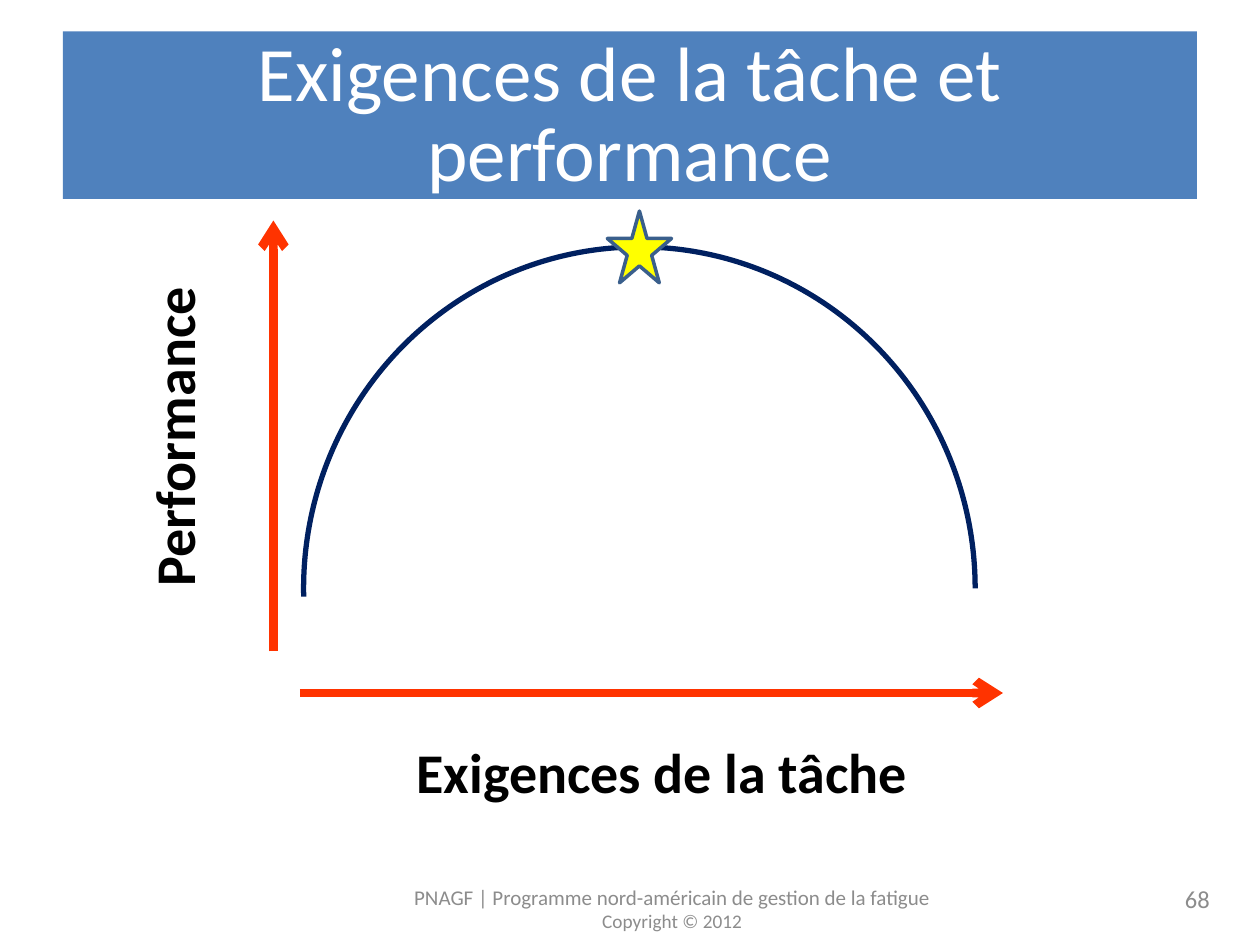
from dataclasses import dataclass

from lxml import etree
from pptx import Presentation
from pptx.dml.color import RGBColor
from pptx.enum.shapes import MSO_CONNECTOR, MSO_SHAPE
from pptx.enum.text import MSO_ANCHOR, PP_ALIGN
from pptx.oxml.ns import qn
from pptx.util import Inches, Pt

CENTER, RIGHT = PP_ALIGN.CENTER, PP_ALIGN.RIGHT
MIDDLE = MSO_ANCHOR.MIDDLE
TITLE_ONLY = 5


@dataclass(frozen=True)
class Theme:
    font: str = "Calibri"
    background: RGBColor = RGBColor(0xFF, 0xFF, 0xFF)
    band: RGBColor = RGBColor(0x4F, 0x81, 0xBD)
    title: RGBColor = RGBColor(0xFF, 0xFF, 0xFF)
    label: RGBColor = RGBColor(0, 0, 0)
    footer: RGBColor = RGBColor(0x8C, 0x8C, 0x8C)
    curve: RGBColor = RGBColor(0x00, 0x20, 0x60)
    axis: RGBColor = RGBColor(0xFF, 0x33, 0x00)
    star: RGBColor = RGBColor(0xFF, 0xFF, 0x00)
    star_edge: RGBColor = RGBColor(0x3A, 0x5F, 0x8C)
    title_size: Pt = Pt(44)
    title_spacing: Pt = Pt(45.8)
    label_size: Pt = Pt(32)
    footer_size: Pt = Pt(12)
    copyright_size: Pt = Pt(11)
    number_size: Pt = Pt(14)


THEME = Theme()


def inches(*lengths):
    return [Inches(length) for length in lengths]


def style(para, size, color, align=CENTER, bold=False):
    para.alignment = align
    para.font.name = THEME.font
    para.font.size = size
    para.font.bold = bold
    para.font.color.rgb = color


def add_text(page, box, lines, color, align=CENTER, bold=False):
    """Add a text box; lines holds a (text, size) pair for each paragraph."""
    frame = page.shapes.add_textbox(*inches(*box)).text_frame
    frame.word_wrap = True
    frame.vertical_anchor = MIDDLE
    for index, (text, size) in enumerate(lines):
        para = frame.add_paragraph() if index else frame.paragraphs[0]
        para.text = text
        style(para, size, color, align, bold)
    return frame


def add_plain_shape(page, kind, box):
    shape = page.shapes.add_shape(kind, *inches(*box))
    shape.shadow.inherit = False
    return shape


def add_title(page, box, text):
    left, top, width, height = box
    band = add_plain_shape(page, MSO_SHAPE.RECTANGLE, box)
    band.fill.solid()
    band.fill.fore_color.rgb = THEME.band
    band.line.fill.background()

    title = page.shapes.title
    band._element.addnext(title._element)
    title.left, title.top, title.width, title.height = inches(
        left, top + 0.05, width, height - 0.08)
    title.text_frame.text = text
    title.text_frame.word_wrap = True
    title.text_frame.vertical_anchor = MIDDLE
    para = title.text_frame.paragraphs[0]
    para.line_spacing = THEME.title_spacing
    style(para, THEME.title_size, THEME.title)


def add_axis(page, start, end):
    axis = page.shapes.add_connector(
        MSO_CONNECTOR.STRAIGHT, *inches(*start, *end))
    axis.line.color.rgb = THEME.axis
    axis.line.width = Pt(5)
    etree.SubElement(axis.line._get_or_add_ln(), qn("a:tailEnd"), type="arrow")
    etree.SubElement(axis._element.spPr, qn("a:effectLst"))


def add_curve(page, box):
    """Draw the upper half of an ellipse with a star at its peak."""
    left, top, width, _ = box
    curve = add_plain_shape(page, MSO_SHAPE.ARC, box)
    curve.adjustments[0] = 107.15
    curve.adjustments[1] = 0
    curve.fill.background()
    curve.line.color.rgb = THEME.curve
    curve.line.width = Pt(3)

    star_width, star_height = 0.51, 0.57
    star = add_plain_shape(page, MSO_SHAPE.STAR_5_POINT, (
        left + (width - star_width) / 2, top - star_height / 2,
        star_width, star_height))
    star.fill.solid()
    star.fill.fore_color.rgb = THEME.star
    star.line.color.rgb = THEME.star_edge
    star.line.width = Pt(2)


def add_diagram(page, box):
    """Place curve, axes and axis labels; the box spans both axes."""
    left, top, width, height = box
    right, bottom = left + width, top + height
    add_curve(page, (left + 0.24, top + 0.21, 5.33, 5.42))
    add_axis(page, (left, bottom - 0.33), (left, top))
    add_axis(page, (left + 0.21, bottom), (right, bottom))

    vertical = add_text(page, (left - 1.17, top + 0.13, 0.74, 3.17),
                        [("Performance", THEME.label_size)],
                        THEME.label, bold=True)
    vertical._txBody.bodyPr.set("vert", "vert270")
    add_text(page, (left + 0.75, bottom + 0.25, 4.67, 0.74),
             [("Exigences de la tâche", THEME.label_size)],
             THEME.label, bold=True)


def add_footer(page, box):
    left, top, width, height = box
    add_text(page, (left, top + 0.08, 4.67, height), [
        ("PNAGF | Programme nord-américain de gestion de la fatigue",
         THEME.footer_size),
        ("Copyright © 2012", THEME.copyright_size),
    ], THEME.footer)
    add_text(page, (left + width - 2.33, top, 2.33, height),
             [("68", THEME.number_size)], THEME.footer, RIGHT)


def main():
    deck = Presentation()
    deck.slide_width, deck.slide_height = inches(10, 7.5)
    page = deck.slides.add_slide(deck.slide_layouts[TITLE_ONLY])
    page.background.fill.solid()
    page.background.fill.fore_color.rgb = THEME.background
    add_title(page, (0.5, 0.25, 9, 1.33), "Exigences de la tâche et performance")
    add_diagram(page, (2.17, 1.75, 5.79, 3.75))
    add_footer(page, (3, 6.93, 6.7, 0.4))
    deck.save("out.pptx")


if __name__ == "__main__":
    main()
